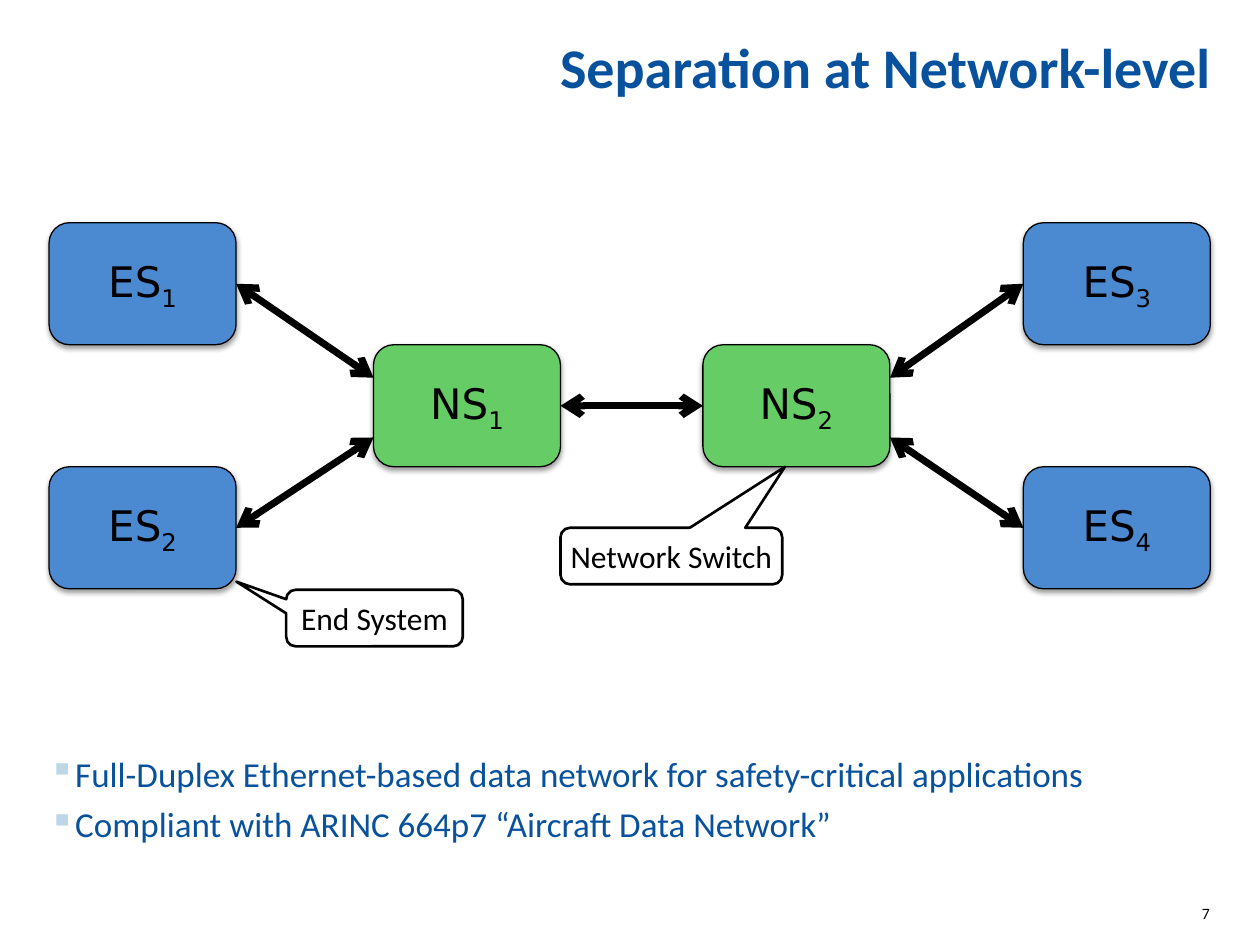
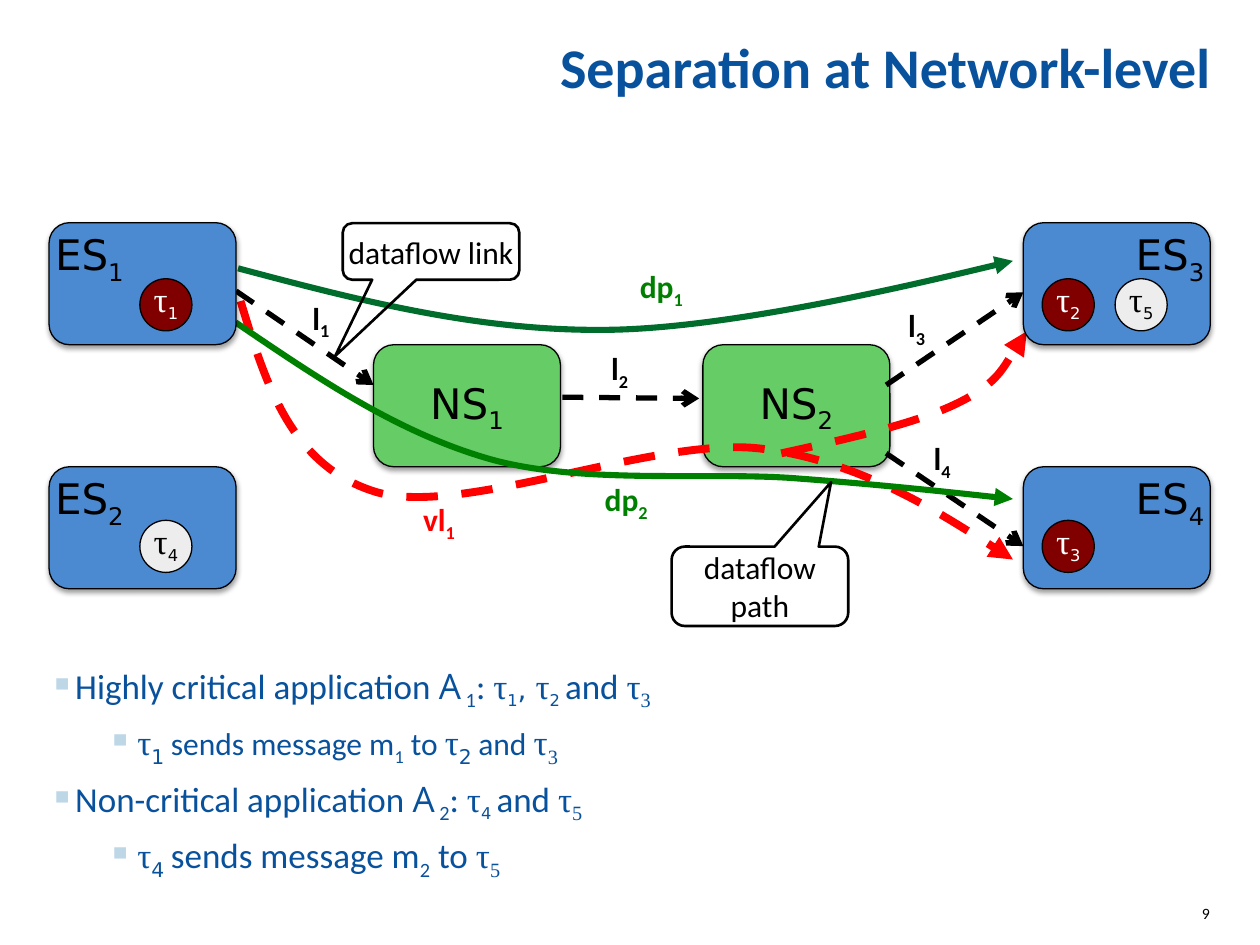
from dataclasses import dataclass

from lxml.etree import SubElement as Sub
from pptx import Presentation
from pptx.dml.color import RGBColor as Rgb
from pptx.enum.dml import MSO_LINE as Dash
from pptx.enum.shapes import MSO_CONNECTOR as Wire, MSO_SHAPE as Kind
from pptx.enum.text import MSO_ANCHOR as Anchor, PP_ALIGN as Align
from pptx.oxml.ns import qn
from pptx.util import Cm, Pt


@dataclass(frozen=True)
class Theme:
    ink: str = "08519C"
    mark: str = "BDD7E7"
    black: str = "000000"
    white: str = "FFFFFF"
    host: str = "4B89D0"
    switch: str = "66CC66"
    high: str = "800000"
    low: str = "EDEDED"
    red: str = "FF0000"
    green: str = "008000"
    pine: str = "006D2C"
    head: int = 32
    node: int = 24
    body: int = 20
    note: int = 18
    small: int = 16
    page: int = 9


T = Theme()
FACES = {"c": "Calibri", "d": "DejaVu Sans", "o": "Open Sans", "t": "Times New Roman"}

TITLE = "Separation at Network-level"
LEFT, TOP, WIDE, HIGH = 0.99, 4.49, 3.77, 2.46
DISC = 1.05

HOSTS = {"ES_1": (LEFT, 0), "ES_2": (LEFT, 2), "ES_3": (20.63, 0), "ES_4": (20.63, 2)}
SWITCHES = {"NS_1": (7.53, 1), "NS_2": (14.17, 1)}
NODES = HOSTS | SWITCHES

CABLES = [
    ("ES_1", 1, 0.5, "NS_1", 0, 0.27),
    ("NS_2", 1, 0.76, "ES_4", 0, 0.5),
    ("NS_2", 1, 0.27, "ES_3", 0, 0.5),
    ("ES_2", 1, 0.5, "NS_1", 0, 0.76),
    ("NS_1", 1, 0.5, "NS_2", 0, 0.5),
]
FLOWS = [
    ("ES_1", 1, 0.56, "NS_1", 0, 0.33),
    ("NS_2", 0.98, 0.89, "ES_4", 0, 0.65),
    ("NS_2", 0.98, 0.33, "ES_3", 0, 0.57),
    ("NS_1", 1.01, 0.43, "NS_2", -0.02, 0.44),
]
CURVES = [
    (T.red, 4.5, True, [(15.75, 9.14), (17.12, 8.84), (18.49, 8.53), (19.3, 8.13),
                        (20.14, 7.72), (20.7, 6.68)]),
    (T.red, 4.5, True, [(4.85, 6.07), (5.36, 7.75), (5.87, 9.42), (7.62, 9.93),
                        (9.37, 10.41), (13.16, 8.81), (15.29, 9.04),
                        (17.42, 9.27), (20.42, 11.28)]),
    (T.pine, 3.5, False, [(4.8, 5.41), (7.21, 6.05), (9.63, 6.68), (12.22, 6.65),
                          (14.83, 6.63), (20.42, 5.26)]),
    (T.green, 3.5, False, [(4.75, 6.5), (6.4, 7.62), (8.03, 8.74), (9.93, 9.27),
                           (11.81, 9.78), (14.38, 9.5), (16.13, 9.65),
                           (17.88, 9.78), (20.42, 10.06)]),
]
LABELS = [
    ("dp_1", 12.9, 5.38, T.green),
    ("vl_1", 8.53, 10.08, T.red),
    ("dp_2", 12.19, 9.68, T.green),
    ("l_1", 6.3, 6.02, T.black),
    ("l_2", 12.32, 7.04, T.black),
    ("l_3", 18.31, 6.17, T.black),
    ("l_4", 18.82, 8.86, T.black),
]
TASKS = [
    ("τ_1", "ES_1", 1.83, 1.13, T.high),
    ("τ_4", "ES_2", 1.83, 1.08, T.low),
    ("τ_2", "ES_3", 0.38, 1.13, T.high),
    ("τ_5", "ES_3", 1.85, 1.13, T.low),
    ("τ_3", "ES_4", 0.38, 1.08, T.high),
]
ROLES = [
    ("End System", (5.77, 11.89, 3.56, 1.14), (-0.782, -0.643), False),
    ("Network Switch", (11.3, 10.64, 4.47, 1.14), (0.512, -1.578), False),
]
TERMS = [
    ("dataflow path", (13.54, 11.02, 3.56, 1.6), (0.403, -1.313), True),
    ("dataflow link", (6.91, 4.5, 3.56, 1.14), (-0.543, 1.85), False),
]

# Lower-case keys name a face, upper-case keys the same face as a subscript.
FACTS = [
    (0, [("Full-Duplex Ethernet-based data network for safety-critical applications", "c")]),
    (0, [("Compliant with ARINC 664p7 “Aircraft Data Network”", "c")]),
]
APPS = [
    (0, [("Highly critical application ", "c"), ("A", "o"), (" 1", "C"), (": ", "c"),
         ("τ", "t"), ("1", "D", T.small), (", ", "d", T.small), ("τ", "t"),
         ("2 ", "D", T.small), ("and ", "c"), ("τ", "t"), ("3", "T")]),
    (1, [("τ", "t"), ("1 ", "D"), ("sends message m", "c", T.note), ("1", "C", T.note),
         (" to ", "c", T.note), ("τ", "t"), ("2 ", "D"), ("and ", "c", T.note),
         ("τ", "t"), ("3", "T")]),
    (0, [("Non-critical application ", "c"), ("A", "o"), (" 2", "C"), (": ", "c"),
         ("τ", "t"), ("4 ", "D", T.small), ("and ", "c"), ("τ", "t"), ("5", "T")]),
    (1, [("τ", "t"), ("4 ", "D"), ("sends message m", "c"), ("2", "C"), (" to ", "c"),
         ("τ", "t"), ("5", "T")]),
]


def rgb(hue):
    return Rgb.from_string(hue)


def box(*sizes):
    return [Cm(size) for size in sizes]


def tag(parent, name, **attrs):
    return Sub(parent, qn(name), attrs)


def write(para, runs, size, hue, face="c", bold=False, align=None):
    para.alignment = align
    font = para.font
    font.name, font.size, font.bold = FACES[face], Pt(size), bold
    font.color.rgb = rgb(hue)
    for text, key, *own in runs:
        run = para.add_run()
        run.text = text
        if key.lower() != face:
            run.font.name = FACES[key.lower()]
        if own:
            run.font.size = Pt(own[0])
        if key.isupper():
            run._r.get_or_add_rPr().set("baseline", "-25000")


def split(name, key):
    stem, low = name.split("_")
    return [(stem, key), (low, key.upper())]


def setup(shape, anchor, wrap=True):
    frame = shape.text_frame
    frame.margin_left = frame.margin_right = frame.margin_top = frame.margin_bottom = 0
    frame.vertical_anchor, frame.word_wrap = anchor, wrap
    return frame.paragraphs[0]


def lead(para):
    tag(tag(para._p.get_or_add_pPr(), "a:spcBef"), "a:spcPct", val="50000")


def label(slide, area, runs, size, hue, anchor=Anchor.TOP, wrap=True, **style):
    para = setup(slide.shapes.add_textbox(*box(*area)), anchor, wrap)
    write(para, runs, size, hue, **style)
    return para


def block(slide, kind, area, fill, width):
    shape = slide.shapes.add_shape(kind, *box(*area))
    shape.shadow.inherit = False
    if fill:
        shape.fill.solid()
        shape.fill.fore_color.rgb = rgb(fill)
    else:
        shape.fill.background()
    stroke(shape.line, T.black, width)
    return shape


def stroke(line, hue, width, dash=False):
    line.color.rgb = rgb(hue)
    line.width = Pt(width)
    if dash:
        line.dash_style = Dash.DASH


def spot(name):
    x, row = NODES[name]
    return x, TOP + row * HIGH


def node(slide, name, inner=False):
    fill = T.host if name in HOSTS else T.switch
    shape = block(slide, Kind.ROUNDED_RECTANGLE, (*spot(name), WIDE, HIGH), fill, 0.75)
    glow = tag(shape._element.spPr.find(qn("a:effectLst")), "a:outerShdw",
               blurRad=str(Pt(3.1)), dist=str(Pt(1.6)), dir="5400000", rotWithShape="0")
    tag(tag(glow, "a:srgbClr", val=T.black), "a:alpha", val="38000")
    align, anchor = Align.CENTER, Anchor.MIDDLE
    if inner:
        align = Align.LEFT if NODES[name][0] == LEFT else Align.RIGHT
        anchor = Anchor.TOP
    para = setup(shape, anchor)
    lead(para)
    write(para, split(name, "d"), T.node, T.black, "d", align=align)


def link(slide, start, sx, sy, end, ex, ey, width, both):
    ends = []
    for name, side, drop in ((start, sx, sy), (end, ex, ey)):
        x, y = spot(name)
        ends += box(x + side * WIDE, y + drop * HIGH)
    wire = slide.shapes.add_connector(Wire.STRAIGHT, *ends)
    stroke(wire.line, T.black, width, not both)
    line = wire.line._get_or_add_ln()
    if both:
        tag(line, "a:headEnd", type="arrow")
    tag(line, "a:tailEnd", type="arrow")
    tag(wire._element.spPr, "a:effectLst")


def curve(slide, hue, width, dash, points):
    first, *rest = [box(*point) for point in points]
    pen = slide.shapes.build_freeform(*first)
    pen.add_line_segments(rest + rest[-1:], close=False)
    shape = pen.convert_to_shape()
    trail = shape._element.find(".//" + qn("a:path"))
    steps = trail.findall(qn("a:lnTo"))
    for i in range(0, len(steps), 3):
        bend = tag(trail, "a:cubicBezTo")
        for step in steps[i:i + 3]:
            bend.append(step[0])
            trail.remove(step)
    shape.shadow.inherit = False
    shape.fill.background()
    stroke(shape.line, hue, width, dash)
    tag(shape.line._get_or_add_ln(), "a:tailEnd", type="triangle")


def task(slide, name, host, dx, dy, fill):
    x, y = spot(host)
    para = setup(block(slide, Kind.OVAL, (x + dx, y + dy, DISC, DISC), fill, 0.75),
                 Anchor.BOTTOM)
    lead(para)
    stem, low = name.split("_")
    write(para, [(stem, "t"), (low, "D", T.small)], T.body,
          T.white if fill == T.high else T.black, "t", align=Align.CENTER)


def callout(slide, text, area, tip, wrap):
    shape = block(slide, Kind.ROUNDED_RECTANGULAR_CALLOUT, area, None, 1.5)
    shape.adjustments[0], shape.adjustments[1] = tip
    write(setup(shape, Anchor.MIDDLE, wrap), [(text, "c")], T.note, T.black,
          align=Align.CENTER)


def bullets(slide, area, items):
    frame = slide.shapes.add_textbox(*box(*area)).text_frame
    for i, (level, runs) in enumerate(items):
        para = frame.add_paragraph() if i else setup(slide.shapes[-1], Anchor.TOP)
        para.level, para.space_before = level, Pt(5)
        props = para._p.get_or_add_pPr()
        props.set("marL", str(Cm(0.51 + 1.27 * level)))
        props.set("indent", str(Cm(-0.61)))
        tag(tag(props, "a:buClr"), "a:srgbClr", val=T.mark)
        tag(props, "a:buChar", char="▪")
        write(para, runs, T.body, T.ink)


def page(deck, number):
    slide = deck.slides.add_slide(deck.slide_layouts[6])
    label(slide, (23.55, 18.21, 0.84, 0.84), [(number, "c")], T.page, T.black,
          align=Align.RIGHT)
    para = label(slide, (LEFT, 0, 23.42, 2.01), [(TITLE, "c")], T.head, T.ink,
                 Anchor.BOTTOM, bold=True, align=Align.RIGHT)
    para.line_spacing = 0.8
    return slide


def topology(deck):
    slide = page(deck, "7")
    for name in NODES:
        node(slide, name)
    for cable in CABLES:
        link(slide, *cable, 4, True)
    bullets(slide, (LEFT, 15.16, 23.19, 1.78), FACTS)
    for role in ROLES:
        callout(slide, *role)


def dataflow(deck):
    slide = page(deck, "9")
    for name in SWITCHES:
        node(slide, name)
    for flow in FLOWS:
        link(slide, *flow, 3, False)
    for bend in CURVES:
        curve(slide, *bend)
    for name, x, y, hue in LABELS:
        label(slide, (x, y, 0.6 * len(name) - 1.1, 0.76), split(name, "c"), T.note, hue,
              wrap=False, bold=True, align=Align.LEFT)
    for name in HOSTS:
        node(slide, name, True)
    for job in TASKS:
        task(slide, *job)
    bullets(slide, (LEFT, 13.39, 16.94, 1.78), APPS)
    for term in TERMS:
        callout(slide, *term)


def main():
    deck = Presentation()
    deck.slide_width, deck.slide_height = box(25.4, 19.05)
    topology(deck)
    dataflow(deck)
    deck.save("out.pptx")


if __name__ == "__main__":
    main()
